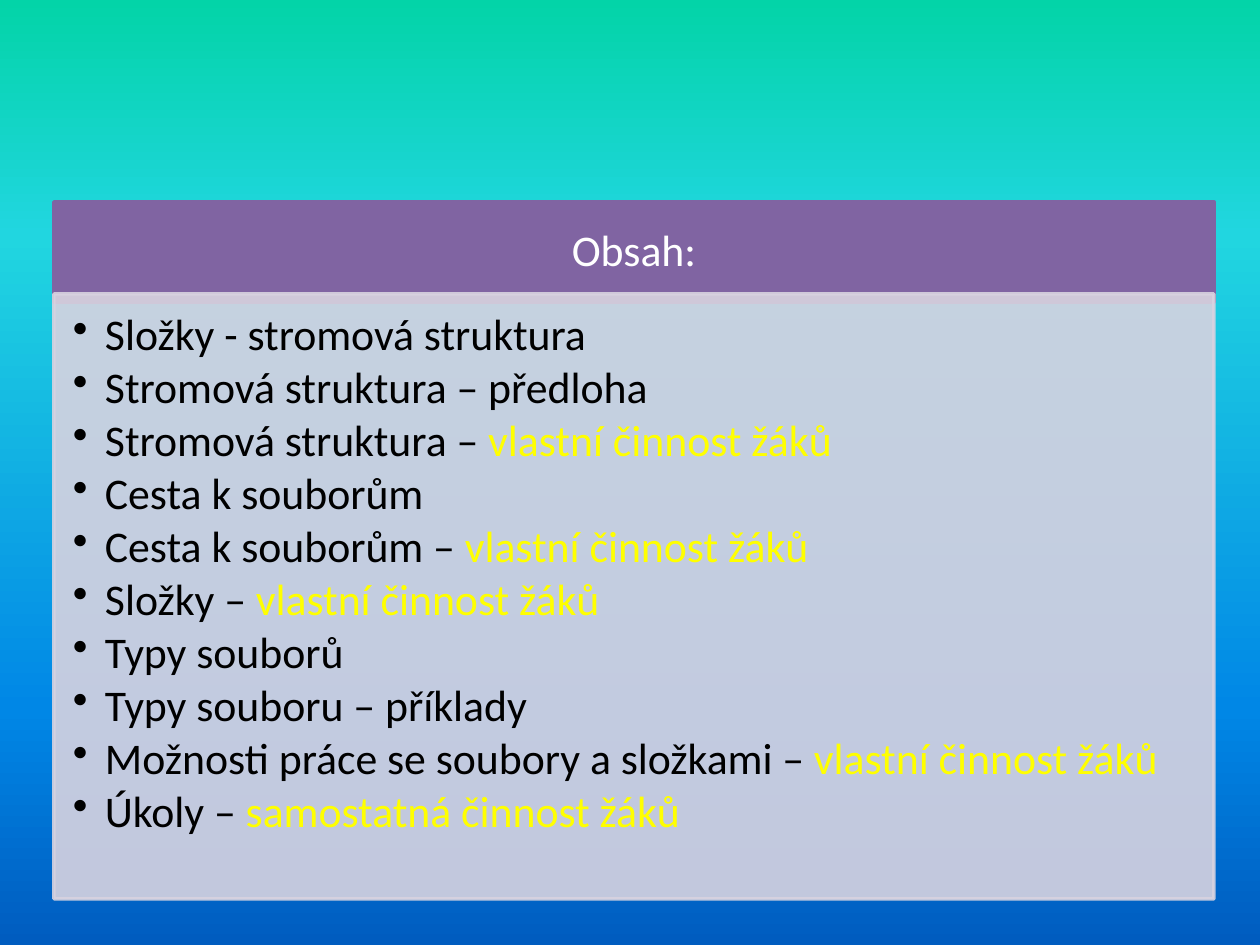
from lxml.etree import SubElement
from pptx import Presentation
from pptx.dml.color import RGBColor
from pptx.enum.shapes import MSO_SHAPE as SHAPE
from pptx.enum.text import MSO_ANCHOR as ANCHOR, PP_ALIGN as ALIGN
from pptx.oxml.ns import qn
from pptx.util import Emu, Pt

PX = 914400 / 126
PURPLE = RGBColor(0x80, 0x64, 0xA2)
LILAC = RGBColor(0xD8, 0xD3, 0xE0)
WHITE = RGBColor(0xFF, 0xFF, 0xFF)
BLACK = RGBColor(0, 0, 0)
YELLOW = RGBColor(0xFF, 0xFF, 0)
SKY = [
    (0, RGBColor(0x03, 0xD4, 0xA8)),
    (25, RGBColor(0x21, 0xD6, 0xE0)),
    (75, RGBColor(0x00, 0x87, 0xE6)),
    (100, RGBColor(0x00, 0x5C, 0xBF)),
]
FONT, SIZE = "Calibri", Pt(25)
PUPILS = "vlastní činnost žáků"
TOPICS = [
    ("Složky - stromová struktura",),
    ("Stromová struktura – předloha",),
    ("Stromová struktura – ", PUPILS),
    ("Cesta k souborům",),
    ("Cesta k souborům – ", PUPILS),
    ("Složky – ", PUPILS),
    ("Typy souborů",),
    ("Typy souboru – příklady",),
    ("Možnosti práce se soubory a složkami – ", PUPILS),
    ("Úkoly – ", "samostatná činnost žáků"),
]


def px(n):
    """Convert pixels to EMU."""
    return Emu(round(n * PX))


def paint_background(s):
    """Fill the slide with a vertical gradient."""
    fill = s.background.fill
    fill.gradient()
    fill.gradient_angle = 270
    stops = s.element.find(".//" + qn("a:gsLst"))
    for stop in list(stops):
        stops.remove(stop)
    for pos, color in SKY:
        stop = SubElement(stops, qn("a:gs"), pos=str(pos * 1000))
        SubElement(stop, qn("a:srgbClr"), val=str(color))


def add_panel(s, box, color, insets, anchor, opacity=100):
    """Add a filled rectangle and return its text frame."""
    sp = s.shapes.add_shape(SHAPE.RECTANGLE, *map(px, box))
    sp.shadow.inherit = False
    sp.fill.solid()
    sp.fill.fore_color.rgb = sp.line.color.rgb = color
    sp.line.width = Pt(2)
    if opacity < 100:
        for clr in sp.element.spPr.iter(qn("a:srgbClr")):
            SubElement(clr, qn("a:alpha"), val=str(opacity * 1000))
    tf = sp.text_frame
    tf.word_wrap = True
    tf.vertical_anchor = anchor
    tf.margin_left, tf.margin_top, tf.margin_right, tf.margin_bottom = map(px, insets)
    return tf


def add_run(p, text, color):
    """Append a run in the slide's font."""
    r = p.add_run()
    r.text = text
    r.font.name, r.font.size = FONT, SIZE
    r.font.color.rgb = color


def add_header(s, box, title):
    """Add the heading bar."""
    tf = add_panel(s, box, PURPLE, (24, 14, 24, 14), ANCHOR.MIDDLE)
    p = tf.paragraphs[0]
    p.alignment = ALIGN.CENTER
    p.line_spacing = 0.9
    add_run(p, title, WHITE)


def add_topics(s, box, topics):
    """Add the bulleted list of topics."""
    tf = add_panel(s, box, LILAC, (19, 19, 24, 28), ANCHOR.TOP, 90)
    for i, parts in enumerate(topics):
        p = tf.add_paragraph() if i else tf.paragraphs[0]
        p.alignment = ALIGN.LEFT
        p.level = 1
        p.line_spacing = 0.9
        p.space_after = Pt(3.3)
        pPr = p._p.get_or_add_pPr()
        pPr.set("marL", str(px(32)))
        pPr.set("indent", str(px(-32)))
        SubElement(pPr, qn("a:buChar"), char="•")
        for text, color in zip(parts, (BLACK, YELLOW)):
            add_run(p, text, color)


def main():
    """Build and save the contents slide."""
    prs = Presentation()
    prs.slide_width, prs.slide_height = px(1260), px(945)
    s = prs.slides.add_slide(prs.slide_layouts[6])
    paint_background(s)
    add_header(s, (54, 202, 1160, 100), "Obsah:")
    add_topics(s, (54, 294, 1160, 605), TOPICS)
    prs.save("out.pptx")


if __name__ == "__main__":
    main()
